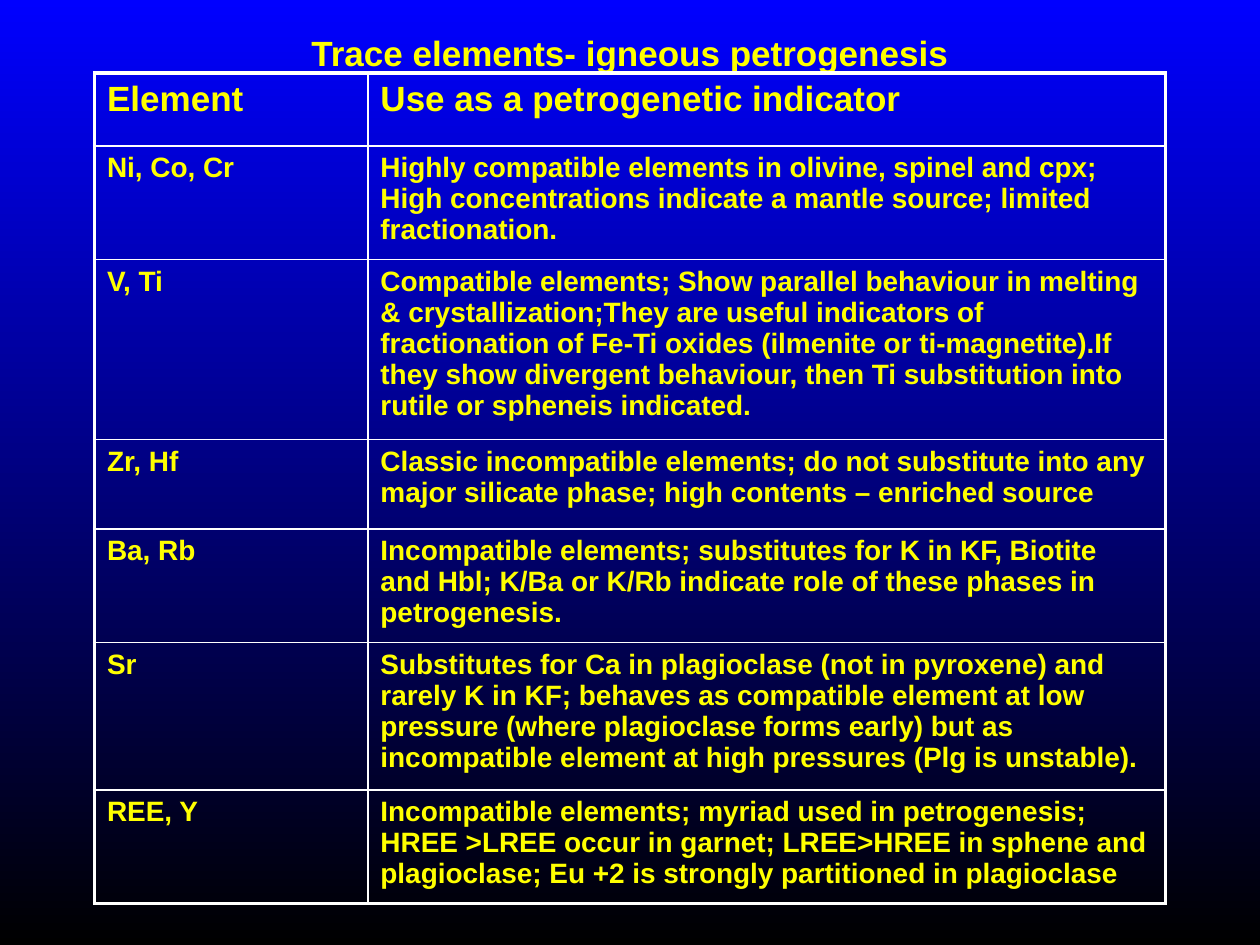
from typing import NamedTuple

from lxml import etree
from pptx import Presentation
from pptx import util as u
from pptx.dml.color import RGBColor
from pptx.enum import text
from pptx.oxml import ns

YELLOW = RGBColor(0xFF, 0xFF, 0x00)
WHITE = RGBColor(0xFF, 0xFF, 0xFF)
BLUE = RGBColor(0x00, 0x00, 0xFF)
BLACK = RGBColor(0x00, 0x00, 0x00)
FONT = "Arial"
OUTER, INNER = 2.25, 1
COLUMN_WIDTHS = (156.24, 455.76)


class Entry(NamedTuple):
    element: str
    use: str
    height: float
    size: float = 16


ENTRIES = (
    Entry("Element", "Use as a petrogenetic indicator", 41.76, 20),
    Entry("Ni, Co, Cr",
          "Highly compatible elements in olivine, spinel and cpx; High "
          "concentrations indicate a mantle source; limited fractionation.", 64.8),
    Entry("V, Ti",
          "Compatible elements; Show parallel behaviour in melting & "
          "crystallization;They are useful indicators of fractionation of Fe-Ti "
          "oxides (ilmenite or ti-magnetite).If they show divergent behaviour, "
          "then Ti substitution into rutile or spheneis indicated.", 102.96),
    Entry("Zr, Hf",
          "Classic incompatible elements; do not substitute into any major "
          "silicate phase; high contents – enriched source", 51.12),
    Entry("Ba, Rb",
          "Incompatible elements; substitutes for K in KF, Biotite and Hbl; K/Ba "
          "or K/Rb indicate role of these phases in petrogenesis.", 64.8),
    Entry("Sr",
          "Substitutes for Ca in plagioclase (not in pyroxene) and rarely K in KF; "
          "behaves as compatible element at low pressure (where plagioclase forms "
          "early) but as incompatible element at high pressures (Plg is unstable).",
          84.24),
    Entry("REE, Y",
          "Incompatible elements; myriad used in petrogenesis; HREE >LREE occur in "
          "garnet; LREE>HREE in sphene and plagioclase; Eu +2 is strongly "
          "partitioned in plagioclase", 64.8),
)


def write(tf, content: str, *, size: float, align=text.PP_ALIGN.LEFT,
          before: int = 0) -> None:
    p = tf.paragraphs[0]
    p.alignment = align
    if before:
        spacing = etree.SubElement(p._p.get_or_add_pPr(), ns.qn("a:spcBef"))
        etree.SubElement(spacing, ns.qn("a:spcPct"), val=str(before * 1000))
    r = p.add_run()
    r.text = content
    r.font.name = FONT
    r.font.size = u.Pt(size)
    r.font.bold = True
    r.font.color.rgb = YELLOW


def set_borders(cell, widths: dict[str, float]) -> None:
    tc_pr = cell._tc.get_or_add_tcPr()
    for i, (side, width) in enumerate(widths.items()):
        line = etree.Element(ns.qn(f"a:ln{side}"), w=str(u.Pt(width)))
        fill = etree.SubElement(line, ns.qn("a:solidFill"))
        etree.SubElement(fill, ns.qn("a:srgbClr"), val=str(WHITE))
        tc_pr.insert(i, line)


def set_background(s) -> None:
    fill = s.background.fill
    fill.gradient()
    fill.gradient_angle = 270
    for stop, color, position in zip(fill.gradient_stops, (BLUE, BLACK), (0, 1)):
        stop.color.rgb = color
        stop.position = position


def add_title(s, content: str) -> None:
    sp = s.shapes.title
    sp.left, sp.top, sp.width, sp.height = map(u.Pt, (54, 12.24, 612, 36))
    tf = sp.text_frame
    tf.vertical_anchor = text.MSO_ANCHOR.MIDDLE
    write(tf, content, size=20, align=text.PP_ALIGN.CENTER)


def add_element_table(s, entries: tuple[Entry, ...]) -> None:
    height = sum(entry.height for entry in entries)
    frame = s.shapes.add_table(len(entries), len(COLUMN_WIDTHS), u.Pt(54),
                               u.Pt(41.76), u.Pt(sum(COLUMN_WIDTHS)), u.Pt(height))
    table = frame.table
    table.first_row = table.horz_banding = False
    for column, width in zip(table.columns, COLUMN_WIDTHS):
        column.width = u.Pt(width)
    last_row, last_col = len(entries) - 1, len(COLUMN_WIDTHS) - 1
    for i, entry in enumerate(entries):
        table.rows[i].height = u.Pt(entry.height)
        for j, content in enumerate((entry.element, entry.use)):
            cell = table.cell(i, j)
            write(cell.text_frame, content, size=entry.size, before=20)
            set_borders(cell, {
                "L": OUTER if j == 0 else INNER,
                "R": OUTER if j == last_col else INNER,
                "T": OUTER if i == 0 else INNER,
                "B": OUTER if i == last_row else INNER,
            })
            cell.fill.background()


def main() -> None:
    prs = Presentation()
    prs.slide_width, prs.slide_height = u.Pt(720), u.Pt(540)
    s = prs.slides.add_slide(prs.slide_layouts[5])
    set_background(s)
    add_title(s, "Trace elements- igneous petrogenesis")
    add_element_table(s, ENTRIES)
    prs.save("out.pptx")


if __name__ == "__main__":
    main()
